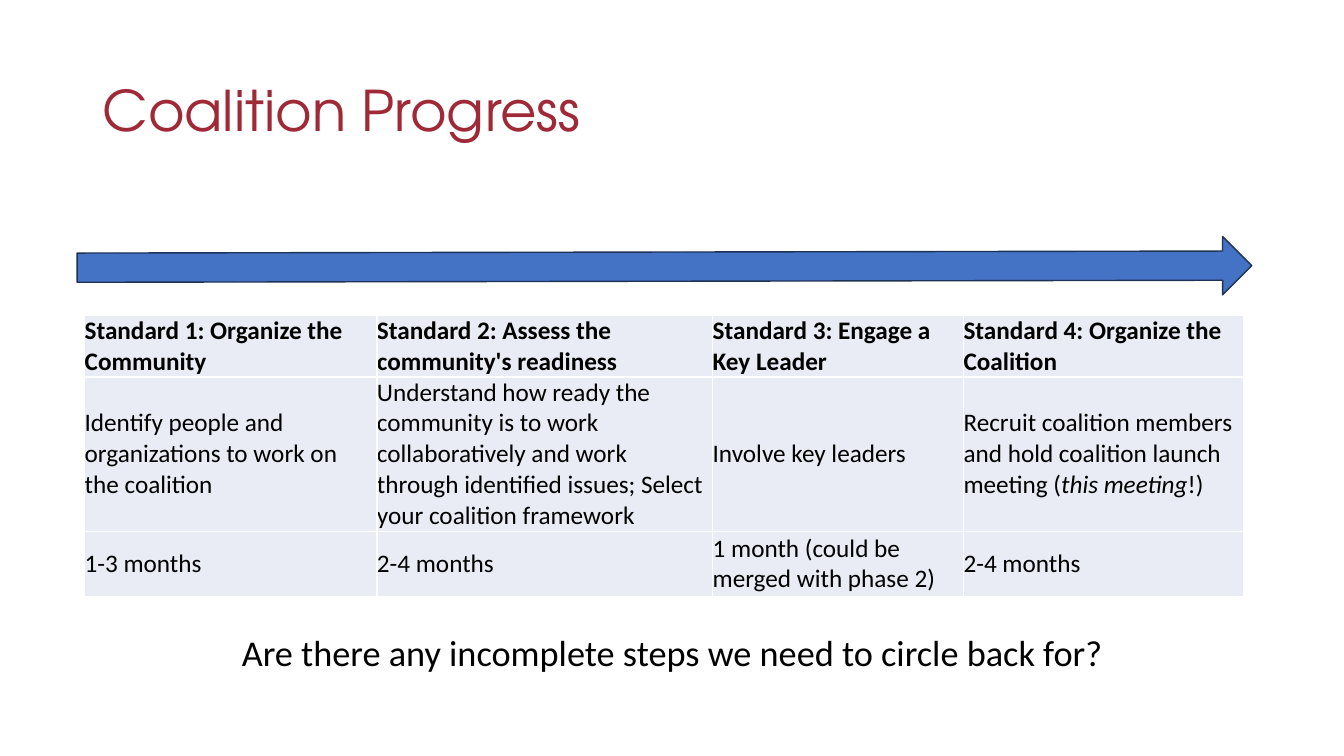
from lxml import etree
from pptx import Presentation
from pptx.dml.color import RGBColor
from pptx.enum.shapes import MSO_SHAPE
from pptx.enum.text import MSO_ANCHOR, PP_ALIGN
from pptx.oxml.ns import qn
from pptx.util import Inches, Pt

DOWN_ARROW = MSO_SHAPE.DOWN_ARROW
MIDDLE, BOTTOM = MSO_ANCHOR.MIDDLE, MSO_ANCHOR.BOTTOM
LEFT, CENTER = PP_ALIGN.LEFT, PP_ALIGN.CENTER

TITLE = "Coalition Progress"
QUESTION = "Are there any incomplete steps we need to circle back for?"
STANDARDS = [
    ("Standard 1: Organize the Community",
     "Identify people and organizations to work on the coalition",
     "1-3 months"),
    ("Standard 2: Assess the community's readiness",
     "Understand how ready the community is to work collaboratively and work "
     "through identified issues; Select your coalition framework",
     "2-4 months"),
    ("Standard 3: Engage a Key Leader",
     "Involve key leaders",
     "1 month (could be merged with phase 2)"),
    ("Standard 4: Organize the Coalition",
     ("Recruit coalition members and hold coalition launch meeting (", "this meeting", "!)"),
     "2-4 months"),
]
COLUMN_PERCENTS = [21.75, 24.98, 18.67, 20.85]
ROW_PERCENTS = [8.13, 20.4, 8.67]
TITLE_BOX = (6.9, 5.33, 86.25, 19.33)
QUESTION_BOX = (6.9, 82.5, 86.25, 9)
TABLE_CORNER = (6.3, 41.73)
ARROW_CENTER = (49.44, 35.27)
ARROW_LENGTH, ARROW_THICKNESS = 87.4, 4.35

presentation = Presentation()
presentation.slide_width = Inches(13.33)
presentation.slide_height = Inches(7.5)
slide = presentation.slides.add_slide(presentation.slide_layouts[6])


def color(value):
    return RGBColor.from_string(value)


def across(percent):
    return round(presentation.slide_width * percent / 100)


def down(percent):
    return round(presentation.slide_height * percent / 100)


def write(frame, text, size=18, font="Calibri", ink="000000", bold=False,
          align=LEFT, spacing=1.0):
    frame.word_wrap = True
    paragraph = frame.paragraphs[0]
    paragraph.alignment = align
    paragraph.line_spacing = spacing
    pieces = (text,) if isinstance(text, str) else text
    for index, piece in enumerate(pieces):
        run = paragraph.add_run()
        run.text = piece
        run.font.size = Pt(size)
        run.font.name = font
        run.font.bold = bold
        run.font.italic = index % 2 == 1
        run.font.color.rgb = color(ink)


def add_text(box, text, **style):
    left, top, width, height = box
    frame = slide.shapes.add_textbox(across(left), down(top), across(width), down(height)).text_frame
    frame.vertical_anchor = MIDDLE
    write(frame, text, **style)


def add_borders(cell, ink, width):
    properties = cell._tc.get_or_add_tcPr()
    for position, side in enumerate(("lnL", "lnR", "lnT", "lnB")):
        border = etree.Element(qn(f"a:{side}"), w=str(Pt(width)))
        fill = etree.SubElement(border, qn("a:solidFill"))
        etree.SubElement(fill, qn("a:srgbClr"), val=ink)
        properties.insert(position, border)


def add_arrow():
    center_x, center_y = across(ARROW_CENTER[0]), down(ARROW_CENTER[1])
    thickness, length = across(ARROW_THICKNESS), across(ARROW_LENGTH)
    arrow = slide.shapes.add_shape(DOWN_ARROW, center_x - thickness // 2,
                                   center_y - length // 2, thickness, length)
    arrow.rotation = 269.9
    arrow.shadow.inherit = False
    arrow.fill.solid()
    arrow.fill.fore_color.rgb = color("4472C4")
    arrow.line.color.rgb = color("1E3256")
    arrow.line.width = Pt(1)


def add_standards():
    table = slide.shapes.add_table(
        len(ROW_PERCENTS), len(STANDARDS), across(TABLE_CORNER[0]), down(TABLE_CORNER[1]),
        across(sum(COLUMN_PERCENTS)), down(sum(ROW_PERCENTS))).table
    for row, percent in zip(table.rows, ROW_PERCENTS):
        row.height = down(percent)
    for column, (percent, standard) in enumerate(zip(COLUMN_PERCENTS, STANDARDS)):
        table.columns[column].width = across(percent)
        for row, text in enumerate(standard):
            heading = row == 0
            cell = table.cell(row, column)
            cell.margin_left = cell.margin_right = cell.margin_top = cell.margin_bottom = 0
            cell.vertical_anchor = BOTTOM if heading else MIDDLE
            cell.fill.solid()
            cell.fill.fore_color.rgb = color("E9EBF5")
            add_borders(cell, "FFFFFF", 1)
            write(cell.text_frame, text, bold=heading)


add_text(TITLE_BOX, TITLE, size=40, font="TeX Gyre Adventor", ink="9F2936", spacing=0.9)
add_text(QUESTION_BOX, QUESTION, size=25.9, align=CENTER, spacing=0.7)
add_arrow()
add_standards()
presentation.save("out.pptx")
